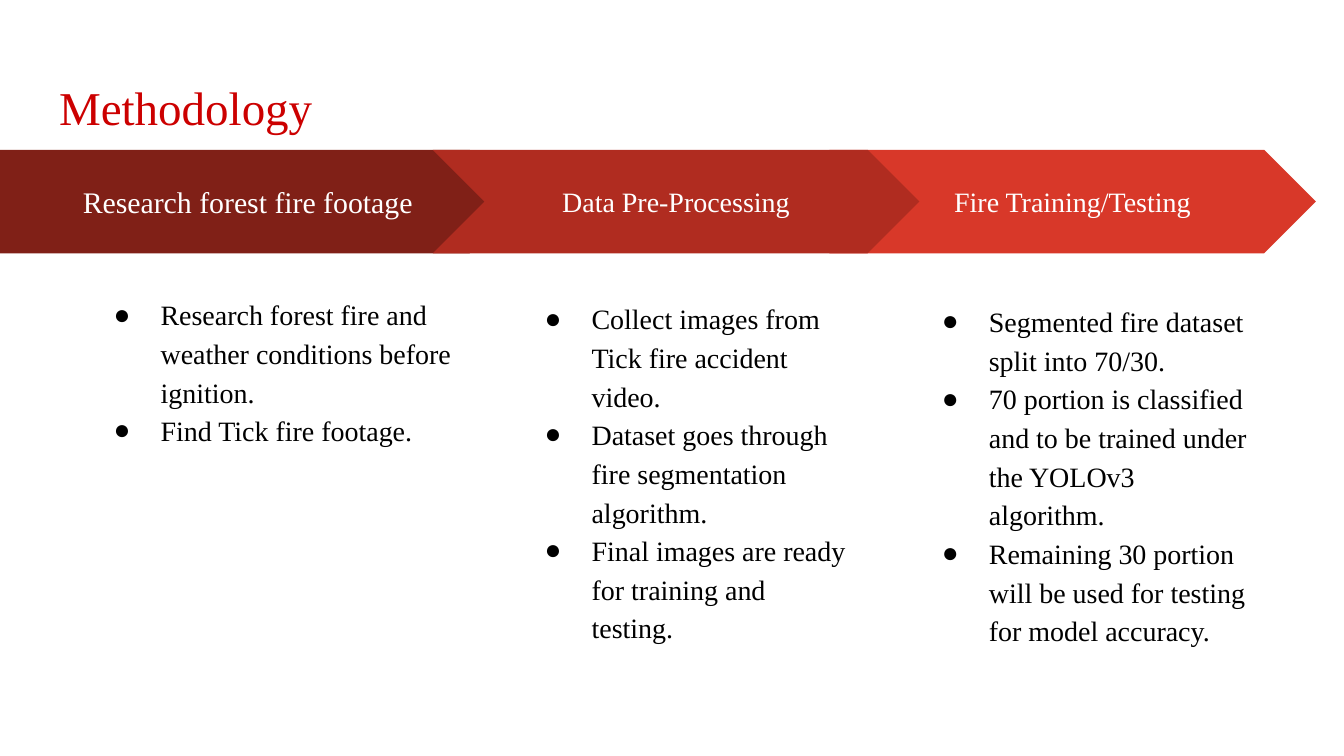
from dataclasses import dataclass

from lxml.etree import SubElement
from pptx import Presentation
from pptx.dml.color import RGBColor
from pptx.enum.shapes import MSO_SHAPE
from pptx.enum.text import MSO_ANCHOR, PP_ALIGN
from pptx.oxml.ns import qn
from pptx.slide import Slide
from pptx.text.text import TextFrame, _Paragraph
from pptx.util import Inches, Pt

WIDTH = Inches(10)
HEIGHT = WIDTH * 9 // 16
CELL = WIDTH // 100


@dataclass(frozen=True)
class Theme:
    """Colours and type sizes of the slide."""
    font: str = "Times New Roman"
    title: str = "CC0000"
    ink: str = "000000"
    light: str = "FFFFFF"
    dark: str = "802017"
    mid: str = "B02C20"
    bright: str = "D83829"
    head: float = 25.2
    lead: float = 16
    body: float = 15


@dataclass(frozen=True)
class Box:
    """Place and size in grid columns and rows."""
    col: float
    row: float
    cols: float
    rows: float

    def place(self) -> list[int]:
        """Return left, top, width and height as lengths."""
        return [int(n * CELL) for n in (self.col, self.row, self.cols, self.rows)]


@dataclass(frozen=True)
class Step:
    """One arrow of the process with its list of points."""
    label: str
    form: MSO_SHAPE
    fill: str
    size: float
    arrow: Box
    area: Box
    points: tuple[str, ...]


THEME = Theme()
TOP, TALL = 11.15, 7.7

STEPS = (
    Step("Fire Training/Testing", MSO_SHAPE.CHEVRON, THEME.bright, THEME.body,
         Box(61.7, TOP, 36.2, TALL), Box(67.6, 21.3, 26.7, 29.8),
         ("Segmented fire dataset split into 70/30.",
          "70 portion is classified and to be trained under the YOLOv3 algorithm.",
          "Remaining 30 portion will be used for testing for model accuracy.")),
    Step("Research forest fire footage", MSO_SHAPE.PENTAGON, THEME.dark, THEME.lead,
         Box(0, TOP, 38.8, TALL), Box(5.97, 20.8, 29.3, 30),
         ("Research forest fire and weather conditions before ignition.",
          "Find Tick fire footage.")),
    Step("Data Pre-Processing", MSO_SHAPE.CHEVRON, THEME.mid, THEME.body,
         Box(32.2, TOP, 36.2, TALL), Box(38.04, 21.1, 26.3, 30),
         ("Collect images from Tick fire accident video.",
          "Dataset goes through fire segmentation algorithm.",
          "Final images are ready for training and testing.")),
)


def set_up(frame: TextFrame) -> None:
    """Wrap a frame and give it even margins."""
    frame.word_wrap = True
    frame.margin_left = frame.margin_right = CELL
    frame.margin_top = frame.margin_bottom = CELL


def write(para: _Paragraph, text: str, size: float, tint: str) -> None:
    """Fill a paragraph with styled text."""
    para.text = text
    para.font.name = THEME.font
    para.font.size = Pt(size)
    para.font.color.rgb = RGBColor.from_string(tint)


def add_text(slide: Slide, box: Box) -> TextFrame:
    """Add a text box and return its frame."""
    frame = slide.shapes.add_textbox(*box.place()).text_frame
    set_up(frame)
    return frame


def add_mark(para: _Paragraph) -> None:
    """Give a paragraph a hanging round bullet."""
    props = para._p.get_or_add_pPr()
    props.set("marL", str(Inches(0.5)))
    props.set("indent", str(Inches(-0.35)))
    tint = SubElement(props, qn("a:buClr"))
    SubElement(tint, qn("a:srgbClr"), val=THEME.ink)
    SubElement(props, qn("a:buFont"), typeface=THEME.font)
    SubElement(props, qn("a:buChar"), char="●")


def add_arrow(slide: Slide, step: Step) -> None:
    """Draw the labelled arrow of a step."""
    shape = slide.shapes.add_shape(step.form, *step.arrow.place())
    shape.shadow.inherit = False
    shape.adjustments[0] = 0.5
    shape.fill.solid()
    shape.fill.fore_color.rgb = RGBColor.from_string(step.fill)
    shape.line.fill.background()
    frame = shape.text_frame
    set_up(frame)
    frame.vertical_anchor = MSO_ANCHOR.MIDDLE
    para = frame.paragraphs[0]
    para.alignment = PP_ALIGN.CENTER
    write(para, step.label, step.size, THEME.light)


def add_points(slide: Slide, step: Step) -> None:
    """Write the bullet list of a step."""
    frame = add_text(slide, step.area)
    for rank, point in enumerate(step.points):
        para = frame.add_paragraph() if rank else frame.paragraphs[0]
        write(para, point, THEME.body, THEME.ink)
        para.line_spacing = 1.15
        add_mark(para)


def main() -> None:
    """Build and save the slide."""
    deck = Presentation()
    deck.slide_width, deck.slide_height = WIDTH, HEIGHT
    slide = deck.slides.add_slide(deck.slide_layouts[6])
    title = add_text(slide, Box(3.41, 4.87, 93.2, 6.3))
    write(title.paragraphs[0], "Methodology", THEME.head, THEME.title)
    for step in STEPS:
        add_arrow(slide, step)
        add_points(slide, step)
    deck.save("out.pptx")


if __name__ == "__main__":
    main()
